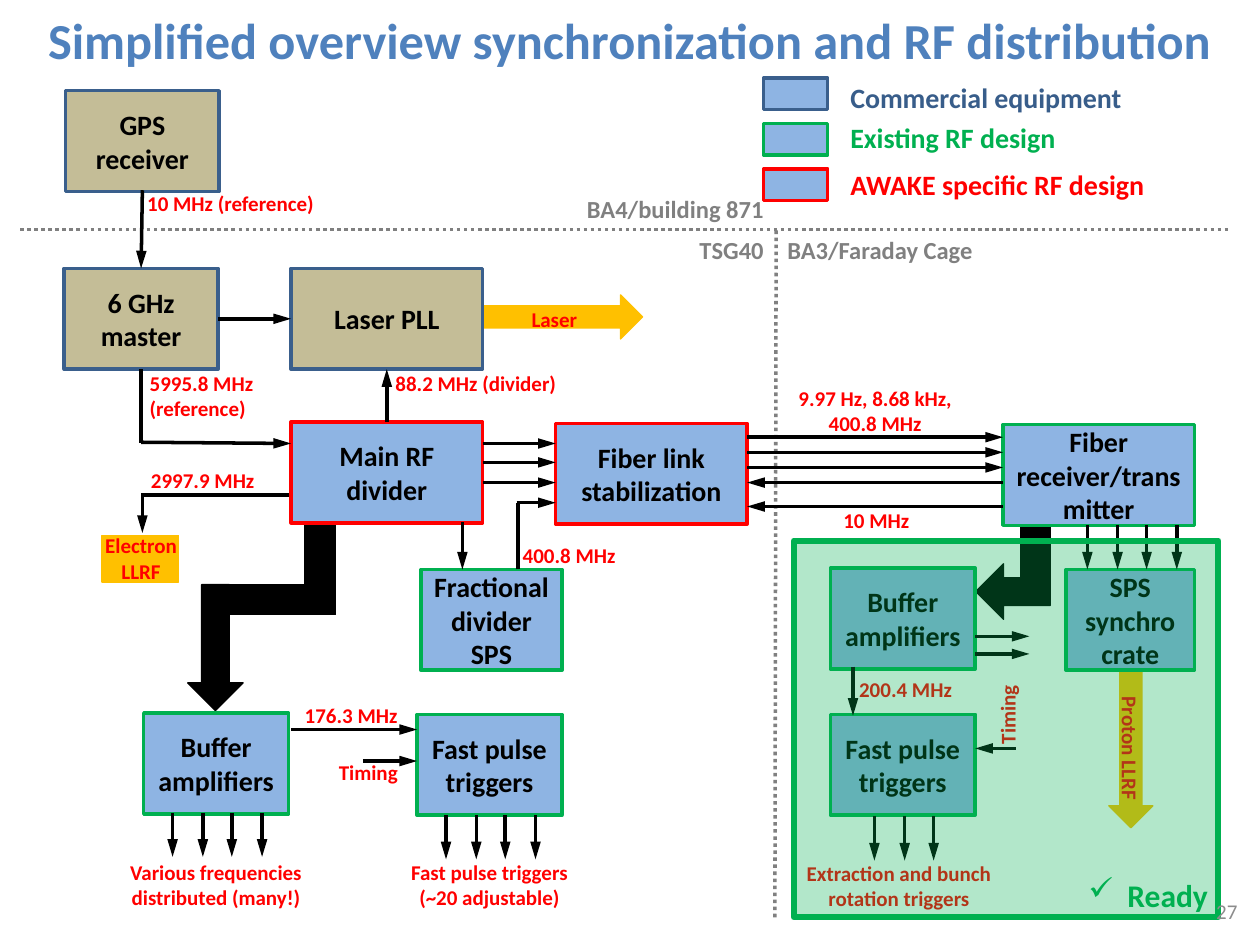
from dataclasses import dataclass

from lxml import etree
from pptx import Presentation
from pptx.dml.color import RGBColor
from pptx.enum.dml import MSO_LINE
from pptx.enum.shapes import MSO_CONNECTOR, MSO_SHAPE
from pptx.enum.text import MSO_ANCHOR, MSO_AUTO_SIZE, PP_ALIGN
from pptx.oxml.ns import qn
from pptx.util import Pt

PX = 9144
TITLE_ONLY = 5
STRAIGHT = MSO_CONNECTOR.STRAIGHT
DOTTED = MSO_LINE.ROUND_DOT
RECT, RIGHT_ARROW, DOWN_ARROW = MSO_SHAPE.RECTANGLE, MSO_SHAPE.RIGHT_ARROW, MSO_SHAPE.DOWN_ARROW
LEFT, CENTER, RIGHT = PP_ALIGN.LEFT, PP_ALIGN.CENTER, PP_ALIGN.RIGHT
TOP, MIDDLE = MSO_ANCHOR.TOP, MSO_ANCHOR.MIDDLE
FIT, FIXED = MSO_AUTO_SIZE.SHAPE_TO_FIT_TEXT, MSO_AUTO_SIZE.NONE


@dataclass(frozen=True)
class Theme:
    font: str = "Calibri"
    title: str = "4F81BD"
    black: str = "000000"
    gray: str = "808080"
    number: str = "8C8C8C"
    red: str = "FF0000"
    green: str = "00B050"
    navy: str = "3A5F8C"
    key_navy: str = "385D8A"
    blue: str = "8EB4E3"
    tan: str = "C4BD97"
    amber: str = "FFC000"
    title_size: float = 28.8
    ready_size: float = 18
    box_size: float = 16
    zone_size: float = 14
    note_size: float = 12
    line: float = 2
    thin: float = 0.75
    thick: float = 3.5


THEME = Theme()


def scaled(*lengths):
    return [length * PX for length in lengths]


def color(value):
    return RGBColor.from_string(value)


def write(frame, text, size, ink, align=CENTER, anchor=TOP, bold=True):
    frame.vertical_anchor = anchor
    for index, words in enumerate(text.split("\n")):
        para = frame.paragraphs[0] if index == 0 else frame.add_paragraph()
        para.alignment = align
        span = para.add_run()
        span.text = words
        span.font.name = THEME.font
        span.font.size = Pt(size)
        span.font.bold = bold
        span.font.color.rgb = color(ink)


def add_title(page, text):
    title = page.shapes.title
    title.left, title.top, title.width, title.height = scaled(0, 0, 1000, 63)
    title.text_frame.auto_size = FIXED
    write(title.text_frame, text, THEME.title_size, THEME.title, anchor=MIDDLE)


def add_block(shapes, area, fill, edge, weight=THEME.line, kind=RECT, turn=0):
    block = shapes.add_shape(kind, *scaled(*area))
    block.shadow.inherit = False
    block.rotation = turn
    block.fill.solid()
    block.fill.fore_color.rgb = color(fill)
    block.line.color.rgb = color(edge)
    block.line.width = Pt(weight)
    return block


def add_solid(shapes, area, fill, kind=RECT, turn=0):
    add_block(shapes, area, fill, fill, THEME.thin, kind, turn)


def add_unit(shapes, text, area, fill, edge):
    unit = add_block(shapes, area, fill, edge)
    unit.text_frame.word_wrap = True
    write(unit.text_frame, text, THEME.box_size, THEME.black, anchor=MIDDLE)


def add_label(shapes, text, area, align=LEFT, size=THEME.note_size, ink=THEME.red,
              wrap=True, turn=0, anchor=TOP, bold=True):
    label = shapes.add_textbox(*scaled(*area))
    label.rotation = turn
    frame = label.text_frame
    frame.word_wrap = wrap
    frame.auto_size = FIT if anchor == TOP else FIXED
    write(frame, text, size, ink, align, anchor, bold)
    return label


def add_line(shapes, ends, arrow=True, ink=THEME.black, dash=None):
    line = shapes.add_connector(STRAIGHT, *scaled(*ends))
    line.line.color.rgb = color(ink)
    line.line.width = Pt(THEME.line)
    if dash:
        line.line.dash_style = dash
    if arrow:
        etree.SubElement(line.line._get_or_add_ln(), qn("a:tailEnd"), type="triangle", w="med", len="lg")
    etree.SubElement(line._element.spPr, qn("a:effectLst"))


def add_fan(shapes, left, top, count):
    for index in range(count):
        x = left + round(23.6 * index)
        add_line(shapes, (x, top, x, top + 35))


def add_key(shapes):
    rows = [("Commercial equipment", 62, 59, 238, THEME.navy, THEME.key_navy),
            ("Existing RF design", 98, 91, 185, THEME.green, THEME.green),
            ("AWAKE specific RF design", 134, 128, 257, THEME.red, THEME.red)]
    for text, top, text_top, width, edge, ink in rows:
        add_block(shapes, (606, top, 51, 25), THEME.blue, edge)
        add_label(shapes, text, (665, text_top, width, 37), size=THEME.box_size, ink=ink, wrap=False)


def add_zones(shapes):
    for ends in [(615, 728, 616, 182), (16, 182, 977, 182)]:
        add_line(shapes, ends, False, THEME.gray, DOTTED)
    for text, area, align in [("BA4/building 871", (425, 149, 191, 34), RIGHT),
                              ("TSG40", (536, 182, 80, 34), RIGHT),
                              ("BA3/Faraday Cage", (615, 182, 219, 34), LEFT)]:
        add_label(shapes, text, area, align, THEME.zone_size, THEME.gray)


def add_units(shapes):
    for text, area, fill, edge in [
        ("GPS receiver", (52, 72, 122, 80), THEME.tan, THEME.navy),
        ("6 GHz master", (51, 213, 122, 80), THEME.tan, THEME.navy),
        ("Laser PLL", (231, 213, 152, 80), THEME.tan, THEME.navy),
        ("Main RF divider", (231, 335, 152, 80), THEME.blue, THEME.red),
        ("Fiber link stabilization", (441, 336, 152, 80), THEME.blue, THEME.red),
        ("Fiber receiver/transmitter", (796, 337, 152, 80), THEME.blue, THEME.green),
        ("Fractional divider SPS", (334, 452, 112, 80), THEME.blue, THEME.green),
        ("SPS synchro crate", (846, 452, 102, 80), THEME.blue, THEME.green),
        ("Buffer amplifiers", (114, 566, 115, 80), THEME.blue, THEME.green),
        ("Buffer amplifiers", (659, 451, 115, 80), THEME.blue, THEME.green),
        ("Fast pulse triggers", (331, 567, 115, 80), THEME.blue, THEME.green),
        ("Fast pulse triggers", (659, 567, 115, 80), THEME.blue, THEME.green),
    ]:
        add_unit(shapes, text, area, fill, edge)


def add_wide_arrows(shapes):
    add_solid(shapes, (383, 234, 127, 35), THEME.amber, RIGHT_ARROW)
    add_solid(shapes, (834, 576, 127, 35), THEME.amber, RIGHT_ARROW, 90)
    add_solid(shapes, (242, 416, 24, 72), THEME.black)
    add_solid(shapes, (162, 464, 104, 24), THEME.black)
    add_solid(shapes, (149, 464, 44, 100), THEME.black, DOWN_ARROW)
    add_solid(shapes, (810, 414, 24, 62), THEME.black)
    add_solid(shapes, (782, 440, 44, 59), THEME.black, DOWN_ARROW, 90)


def add_signals(shapes):
    for ends in [(113, 151, 112, 213), (173, 253, 231, 253), (112, 351, 231, 352),
                 (307, 335, 307, 293), (367, 414, 367, 452), (410, 399, 441, 399),
                 (113, 393, 113, 423), (231, 579, 331, 579), (288, 604, 331, 604),
                 (677, 529, 677, 568), (806, 594, 774, 594),
                 (774, 505, 817, 505), (774, 519, 817, 519)]:
        add_line(shapes, ends)
    for ends in [(112, 293, 112, 352), (411, 452, 411, 399), (229, 393, 112, 393)]:
        add_line(shapes, ends, False)
    for y in (352, 367, 383):
        add_line(shapes, (383, y, 441, y))
    for y in (347, 359, 371):
        add_line(shapes, (593, y, 796, y))
    for y in (383, 402):
        add_line(shapes, (796, y, 593, y))
    for left, top, count in [(354, 647, 4), (137, 645, 4), (694, 648, 3), (863, 417, 4)]:
        add_fan(shapes, left, top, count)


def add_notes(shapes):
    for text, area in [("10 MHz (reference)", (107, 146, 196, 30)),
                       ("88.2 MHz (divider)", (304, 289, 196, 30)),
                       ("400.8 MHz", (405, 426, 196, 30)),
                       ("176.3 MHz", (232, 553, 109, 30)),
                       ("Timing", (259, 598, 109, 30)),
                       ("200.4 MHz", (672, 532, 109, 30))]:
        add_label(shapes, text, area)
    for text, area in [("5995.8 MHz\n(reference)", (109, 289, 104, 50)),
                       ("2997.9 MHz", (110, 366, 104, 30))]:
        add_label(shapes, text, area, wrap=False)
    for text, area in [("Laser", (383, 238, 114, 30)),
                       ("9.97 Hz, 8.68 kHz, 400.8 MHz", (615, 301, 159, 50)),
                       ("10 MHz", (616, 398, 159, 30)),
                       ("Various frequencies distributed (many!)", (83, 677, 177, 50)),
                       ("Fast pulse triggers (~20 adjustable)", (300, 677, 177, 50)),
                       ("Extraction and bunch rotation triggers", (625, 678, 177, 50))]:
        add_label(shapes, text, area, CENTER)
    add_label(shapes, "Timing", (745, 531, 109, 30), turn=270)
    add_label(shapes, "Proton LLRF", (840, 579, 114, 30), CENTER, turn=90)


def add_electron_target(shapes):
    group = shapes.add_group_shape()
    add_solid(group.shapes, (81, 425, 61, 37), THEME.amber)
    add_label(group.shapes, "Electron\nLLRF", (73, 418, 78, 50), CENTER, wrap=False)


def add_ready_area(shapes):
    area = add_block(shapes, (630, 429, 337, 299), THEME.green, THEME.green, THEME.thick)
    tint = area._element.spPr.find(qn("a:solidFill")).find(qn("a:srgbClr"))
    etree.SubElement(tint, qn("a:alpha"), val="30000")
    ready = add_label(shapes, "Ready", (854, 690, 116, 40), size=THEME.ready_size,
                      ink=THEME.green, wrap=False)
    properties = ready.text_frame.paragraphs[0]._p.get_or_add_pPr()
    properties.set("marL", str(31 * PX))
    properties.set("indent", str(-31 * PX))
    etree.SubElement(properties, qn("a:buChar"), char="✓")


def main():
    deck = Presentation()
    deck.slide_width, deck.slide_height = scaled(1000, 750)
    page = deck.slides.add_slide(deck.slide_layouts[TITLE_ONLY])
    add_title(page, "Simplified overview synchronization and RF distribution")
    for add_part in (add_zones, add_wide_arrows, add_units, add_signals, add_electron_target,
                     add_notes, add_key, add_ready_area):
        add_part(page.shapes)
    add_label(page.shapes, "27", (759, 703, 233, 40), RIGHT, ink=THEME.number,
              anchor=MIDDLE, bold=False)
    deck.save("out.pptx")


if __name__ == "__main__":
    main()
